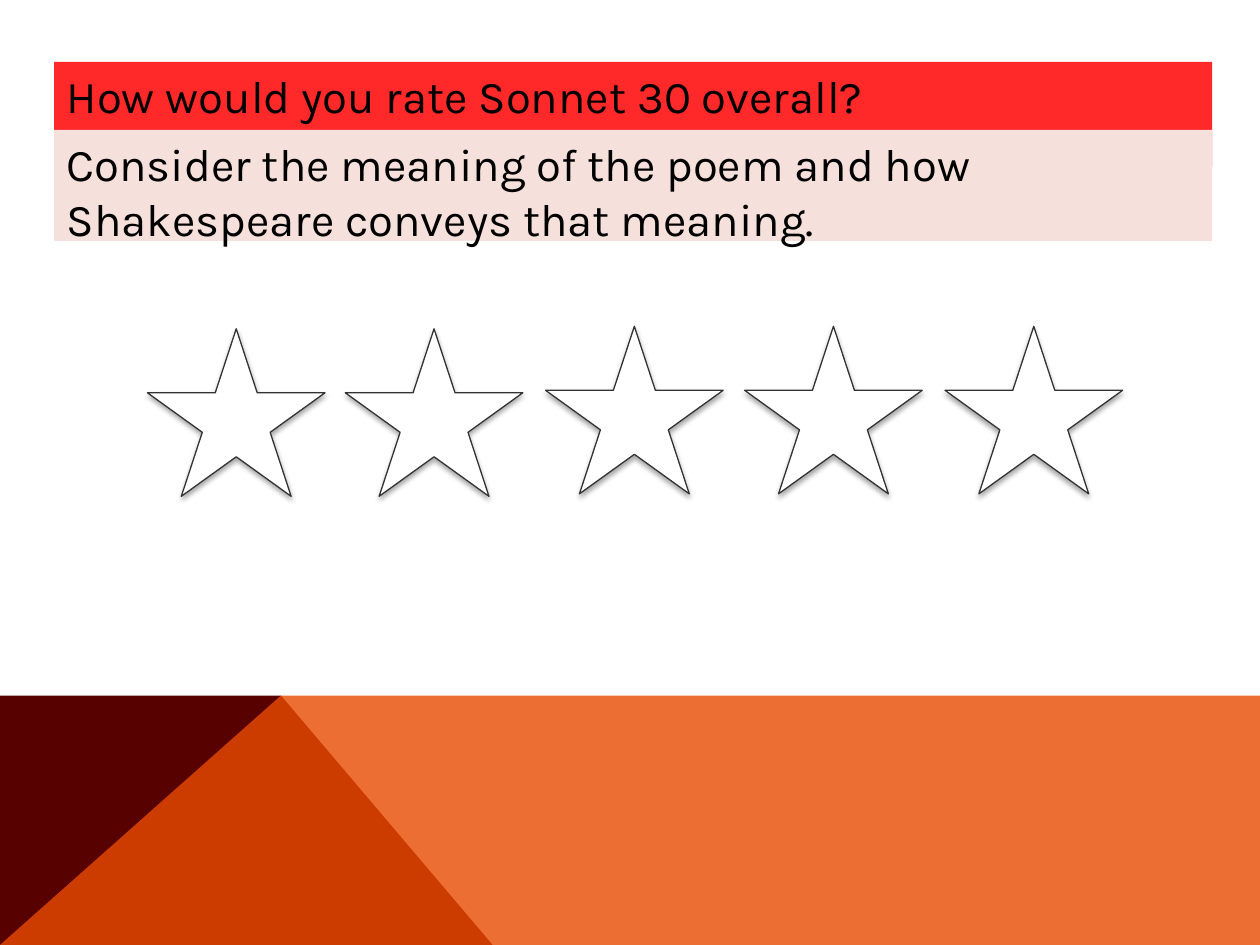
from lxml.etree import SubElement
from pptx import Presentation
from pptx.dml.color import RGBColor
from pptx.enum.shapes import MSO_SHAPE
from pptx.enum.text import MSO_ANCHOR, MSO_AUTO_SIZE as AUTO_SIZE, PP_ALIGN
from pptx.oxml.ns import qn
from pptx.util import Inches, Pt

COLORS = {
    "maroon": "580101",
    "orange": "E94A00",
    "red": "FF2929",
    "blush": "F6E0DB",
    "white": "FFFFFF",
    "outline": "333333",
    "black": "000000",
}
FONT = "Karla"
BAND_TOP = 5.52
BAND_PEAK = 2.23


def rgb(name):
    return RGBColor.from_string(COLORS[name])


def set_fill(shape, color, alpha=None):
    shape.fill.solid()
    shape.fill.fore_color.rgb = rgb(color)
    if alpha is not None:
        srgb = shape.fill._xPr.find(f".//{qn('a:srgbClr')}")
        SubElement(srgb, qn("a:alpha"), val=str(alpha * 1000))


def write_text(shape, text, size=26, color="black", align=PP_ALIGN.LEFT):
    frame = shape.text_frame
    frame.word_wrap = True
    frame.auto_size = AUTO_SIZE.SHAPE_TO_FIT_TEXT
    frame.vertical_anchor = MSO_ANCHOR.TOP
    frame.text = text
    paragraph = frame.paragraphs[0]
    paragraph.alignment = align
    paragraph.space_before = Pt(0)
    # No bullet and no hanging indent
    properties = paragraph._p.get_or_add_pPr()
    properties.set("marL", "0")
    properties.set("indent", "0")
    SubElement(properties, qn("a:buNone"))
    font = paragraph.runs[0].font
    font.name, font.size, font.color.rgb = FONT, Pt(size), rgb(color)


def fill_banner(placeholder, text, top, height, color):
    placeholder.left, placeholder.top = Inches(0.43), Inches(top)
    placeholder.width, placeholder.height = Inches(9.19), Inches(height)
    set_fill(placeholder, color)
    write_text(placeholder, text)


def add_facet(slide, points, color, alpha=None):
    corners = [(Inches(x), Inches(y)) for x, y in points]
    builder = slide.shapes.build_freeform(*corners[0])
    builder.add_line_segments(corners[1:], close=True)
    facet = builder.convert_to_shape()
    facet.shadow.inherit = False
    facet.line.fill.background()
    set_fill(facet, color, alpha)


def add_soft_shadow(shape):
    shape.shadow.inherit = False
    effects = shape._element.spPr.find(qn("a:effectLst"))
    shadow = SubElement(effects, qn("a:outerShdw"), blurRad=str(Pt(3.1)),
                        dist=str(Pt(1.8)), dir="5400000", rotWithShape="0")
    shade = SubElement(shadow, qn("a:srgbClr"), val=COLORS["black"])
    SubElement(shade, qn("a:alpha"), val="35000")


def add_star(slide, left, top):
    star = slide.shapes.add_shape(MSO_SHAPE.STAR_5_POINT, Inches(left),
                                  Inches(top), Inches(1.41), Inches(1.33))
    set_fill(star, "white")
    star.line.color.rgb = rgb("outline")
    star.line.width = Pt(0.75)
    add_soft_shadow(star)


def main():
    deck = Presentation()
    deck.slide_width, deck.slide_height = Inches(10), Inches(7.5)
    slide = deck.slides.add_slide(deck.slide_layouts[1])
    for leftover in list(slide.placeholders)[2:]:
        leftover._element.getparent().remove(leftover._element)

    # Faceted band along the bottom
    add_facet(slide, [(0, 7.5), (0, BAND_TOP), (BAND_PEAK, BAND_TOP),
                      (3.91, 7.5)], "maroon")
    add_facet(slide, [(0, 7.5), (BAND_PEAK, BAND_TOP), (10, BAND_TOP),
                      (10, 7.5)], "orange", alpha=80)

    # Question and prompt
    fill_banner(slide.shapes.title, "How would you rate Sonnet 30 overall?",
                0.49, 0.54, "red")
    fill_banner(slide.placeholders[1],
                "Consider the meaning of the poem and how Shakespeare "
                "conveys that meaning.", 1.03, 0.98, "blush")

    # Five-star rating; the first two stars sit slightly lower
    for left, top in [(1.17, 2.61), (2.74, 2.61), (4.33, 2.59),
                      (5.91, 2.59), (7.5, 2.59)]:
        add_star(slide, left, top)

    deck.save("out.pptx")


if __name__ == "__main__":
    main()
